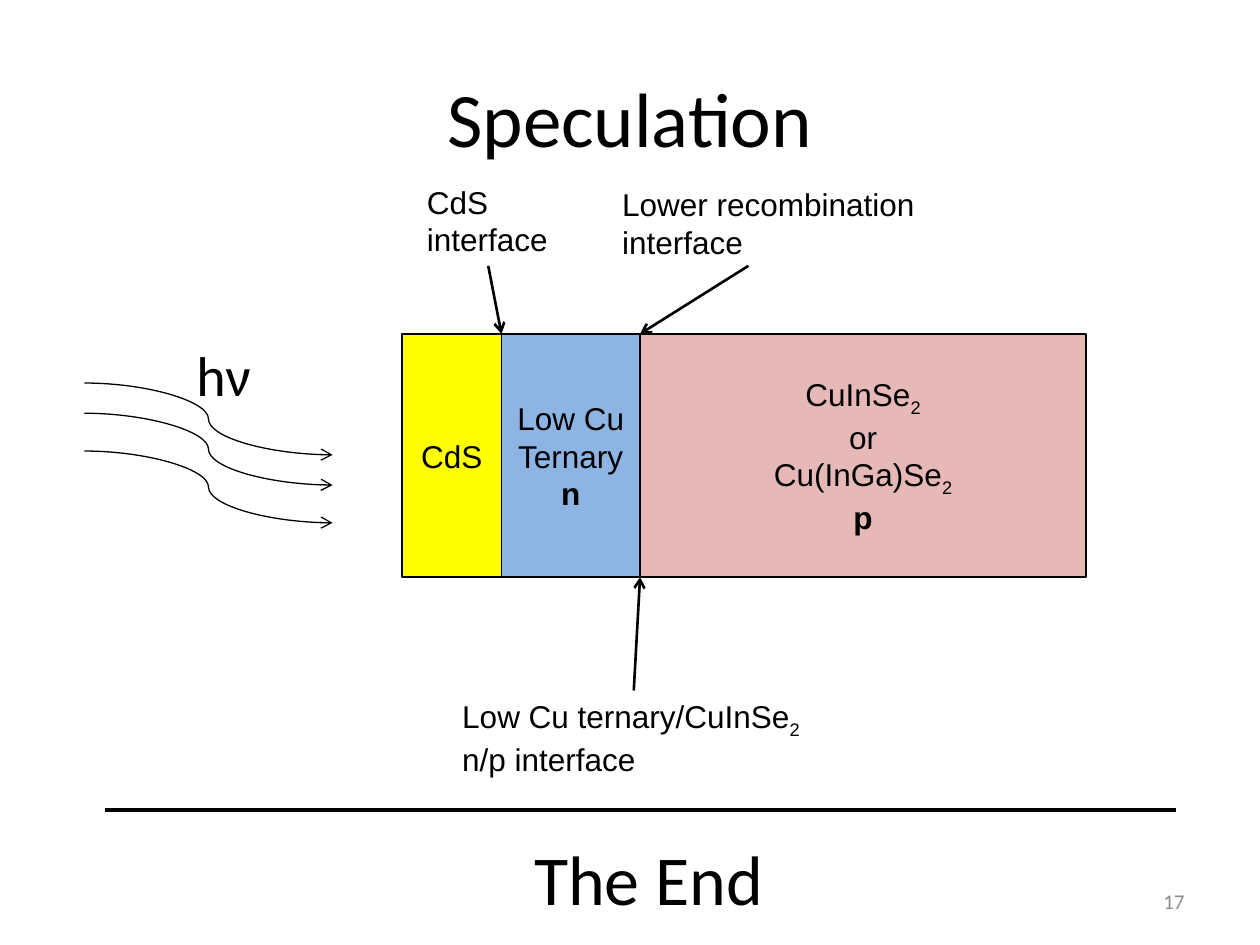
from lxml import etree
from pptx import Presentation
from pptx.dml.color import RGBColor
from pptx.enum.shapes import MSO_CONNECTOR, MSO_SHAPE
from pptx.enum.text import MSO_ANCHOR, MSO_AUTO_SIZE, PP_ALIGN
from pptx.oxml.ns import qn
from pptx.util import Inches, Pt

STRAIGHT, CURVE = MSO_CONNECTOR.STRAIGHT, MSO_CONNECTOR.CURVE
RECTANGLE = MSO_SHAPE.RECTANGLE
MIDDLE, TOP = MSO_ANCHOR.MIDDLE, MSO_ANCHOR.TOP
LEFT, CENTER, RIGHT = PP_ALIGN.LEFT, PP_ALIGN.CENTER, PP_ALIGN.RIGHT
FIT, FIXED = MSO_AUTO_SIZE.SHAPE_TO_FIT_TEXT, MSO_AUTO_SIZE.NONE
TOP_SITE, BOTTOM_SITE = 0, 2
COLORS = {"ink": "000000", "number": "8C8C8C", "absorber": "E6B9B8",
          "ternary": "8EB4E3", "window": "FFFF00"}
BODY = {"name": "Arial", "size": Pt(18)}


def color(name):
    """Return the named colour."""
    return RGBColor.from_string(COLORS[name])


def add_span(para, text, font, ink="ink", subscript=False):
    """Append one formatted run to a paragraph."""
    span = para.add_run()
    span.text = text
    for key, value in font.items():
        setattr(span.font, key, value)
    span.font.color.rgb = color(ink)
    if subscript:
        span.font._element.set("baseline", "-25000")


def write_lines(frame, lines, font, align=LEFT, ink="ink"):
    """Write paragraphs; _ starts a subscript and * starts a bold line."""
    for index, line in enumerate(lines):
        para = frame.paragraphs[0] if index == 0 else frame.add_paragraph()
        para.alignment = align
        style = {**font, "bold": line.startswith("*")}
        base, _, subscript = line.lstrip("*").partition("_")
        add_span(para, base, style, ink)
        if subscript:
            add_span(para, subscript, style, ink, subscript=True)


def add_label(page, box, lines, font=BODY):
    """Add a text box that fits its unwrapped lines."""
    label = page.shapes.add_textbox(*map(Inches, box))
    frame = label.text_frame
    frame.word_wrap, frame.auto_size = False, FIT
    write_lines(frame, lines, font)
    return label


def add_line(page, start, end, width, kind=STRAIGHT, arrow=True):
    """Add a black line, with an open arrowhead at its end if wanted."""
    line = page.shapes.add_connector(kind, *map(Inches, (*start, *end)))
    line.line.width = Pt(width)
    line.line.color.rgb = color("ink")
    if arrow:
        outline = line.line._get_or_add_ln()
        etree.SubElement(outline, qn("a:tailEnd"), type="arrow")
    etree.SubElement(line._element.spPr, qn("a:effectLst"))
    return line


def add_title(page, box):
    """Place the slide title."""
    title = page.shapes.title
    title.left, title.top, title.width, title.height = map(Inches, box)
    title.text_frame.vertical_anchor = MIDDLE
    write_lines(title.text_frame, ["Speculation"],
                {"name": "Calibri", "size": Pt(44)}, CENTER)


def add_page_number(page, box):
    """Place the slide number."""
    frame = page.shapes.add_textbox(*map(Inches, box)).text_frame
    frame.word_wrap, frame.vertical_anchor = True, MIDDLE
    write_lines(frame, ["17"], {"name": "Calibri", "size": Pt(12)}, RIGHT, "number")


def add_cell_stack(page, box):
    """Draw the three layers side by side and return the two interface positions."""
    left, top, width, height = box
    first, second = left + 0.79, left + 1.89
    layers = [
        (second, left + width, "absorber", ["CuInSe_2", "or", "Cu(InGa)Se_2", "*p"]),
        (first, second, "ternary", ["Low Cu", "Ternary", "*n"]),
        (left, first, "window", ["CdS"]),
    ]
    for start, end, fill, lines in layers:
        layer = page.shapes.add_shape(
            RECTANGLE, *map(Inches, (start, top, end - start, height)))
        layer.shadow.inherit = False
        layer.fill.solid()
        layer.fill.fore_color.rgb = color(fill)
        layer.line.color.rgb = color("ink")
        layer.line.width = Pt(1)
        frame = layer.text_frame
        frame.word_wrap, frame.vertical_anchor = True, MIDDLE
        write_lines(frame, lines, BODY, CENTER)
    return first, second


def add_light(page, box):
    """Draw the incoming light waves and their label."""
    left, top, width, height = box
    for offset in (0.39, 0.63, 0.93):
        start = top + offset
        add_line(page, (left, start), (left + width, start + height), 0.75, CURVE)
    add_label(page, (left + 0.79, top, 0.64, 0.64), ["hν"],
              {"name": "Calibri", "size": Pt(32)})


def add_callouts(page, stack, interfaces):
    """Label the interfaces of the cell and point at them."""
    top, bottom = stack[1], stack[1] + stack[3]
    first, second = interfaces
    window = add_label(page, (3.29, 1.4, 1.17, 0.71), ["CdS", "interface"])
    pointer = add_line(page, (3.88, 2.11), (first, top), 1.5)
    pointer.begin_connect(window, BOTTOM_SITE)
    add_label(page, (4.84, 1.42, 2.54, 0.71), ["Lower recombination", "interface"])
    add_line(page, (5.94, 2.11), (second, top), 1.5)
    junction = add_label(page, (3.57, 5.48, 2.92, 0.71),
                         ["Low Cu ternary/CuInSe_2", "n/p interface"])
    pointer = add_line(page, (5.03, 5.48), (second, bottom), 1.5)
    pointer.begin_connect(junction, TOP_SITE)


def add_closing(page, box):
    """Draw the rule and the closing words below it."""
    left, top, width, _ = box
    add_label(page, (left + 3.31, top + 0.15, 2.04, 0.77), ["The End"],
              {"name": "Calibri", "size": Pt(40)})
    add_line(page, (left, top), (left + width, top), 2.25, arrow=False)


def main():
    """Build the slide and save the deck."""
    deck = Presentation()
    deck.slide_width, deck.slide_height = Inches(10), Inches(7.5)
    page = deck.slides.add_slide(deck.slide_layouts[5])
    stack = (3.19, 2.65, 5.43, 1.93)
    add_title(page, (0.5, 0.3, 9, 1.25))
    add_page_number(page, (7.17, 6.95, 2.33, 0.4))
    interfaces = add_cell_stack(page, stack)
    add_light(page, (0.67, 2.65, 1.97, 0.57))
    add_callouts(page, stack, interfaces)
    add_closing(page, (0.83, 6.43, 8.5, 0.92))
    deck.save("out.pptx")


if __name__ == "__main__":
    main()
